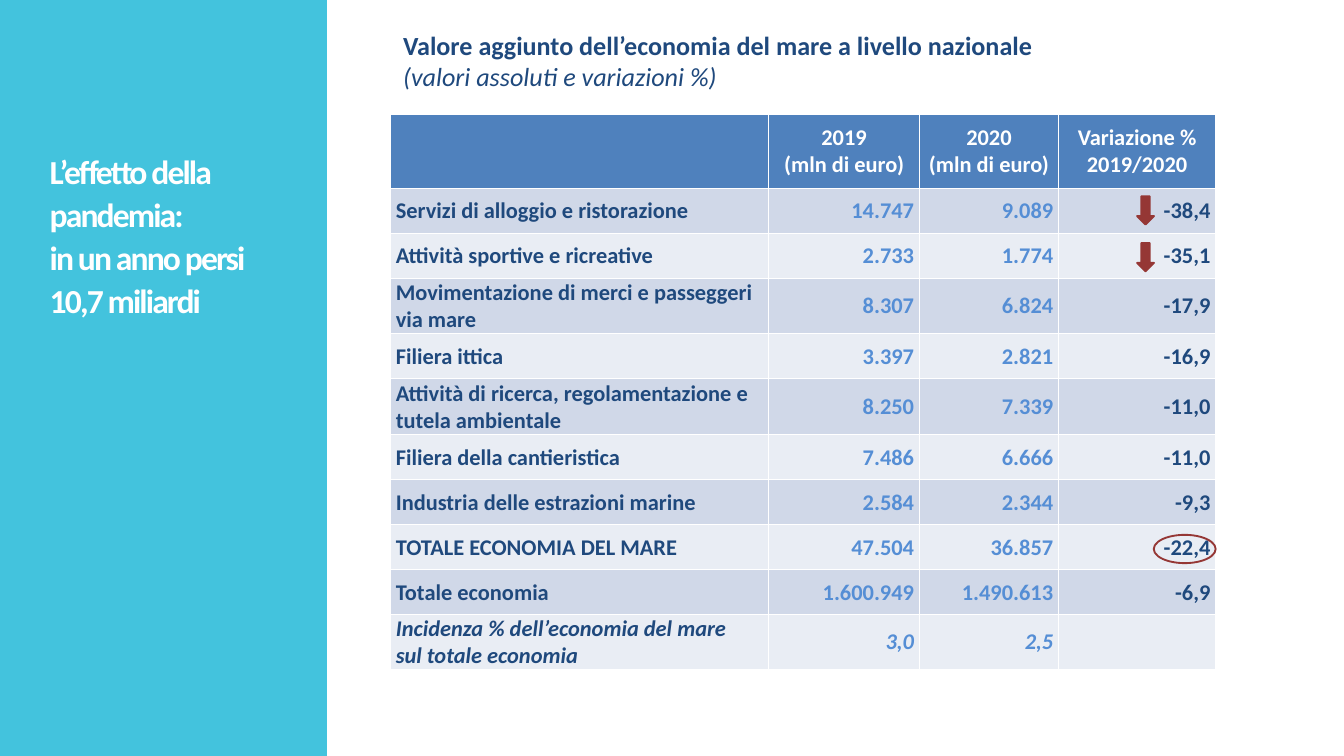
from pptx import Presentation
from pptx.dml.color import RGBColor
from pptx.enum import shapes, text
from pptx.util import Cm, Pt

FONT = "Calibri"
WHITE = RGBColor(0xFF, 0xFF, 0xFF)
TURQUOISE = RGBColor(0x43, 0xC3, 0xDD)
NAVY = RGBColor(0x1F, 0x49, 0x7D)
BLUE = RGBColor(0x4F, 0x81, 0xBD)
LIGHT_BLUE = RGBColor(0x55, 0x8E, 0xD5)
BANDS = (RGBColor(0xD0, 0xD8, 0xE8), RGBColor(0xE9, 0xED, 0xF4))
RED = RGBColor(0x95, 0x37, 0x35)

HEADER = ["", "2019\n(mln di euro)", "2020\n(mln di euro)", "Variazione % 2019/2020"]
ROWS = [
    ["Servizi di alloggio e ristorazione", "14.747", "9.089", "-38,4"],
    ["Attività sportive e ricreative", "2.733", "1.774", "-35,1"],
    ["Movimentazione di merci e passeggeri via mare", "8.307", "6.824", "-17,9"],
    ["Filiera ittica", "3.397", "2.821", "-16,9"],
    ["Attività di ricerca, regolamentazione e tutela ambientale", "8.250", "7.339", "-11,0"],
    ["Filiera della cantieristica", "7.486", "6.666", "-11,0"],
    ["Industria delle estrazioni marine", "2.584", "2.344", "-9,3"],
    ["TOTALE ECONOMIA DEL MARE", "47.504", "36.857", "-22,4"],
    ["Totale economia", "1.600.949", "1.490.613", "-6,9"],
    ["Incidenza % dell’economia del mare\nsul totale economia", "3,0", "2,5", ""],
]
COLUMN_WIDTHS = [14.3, 5.69, 5.26, 5.94]
COLUMN_COLORS = [NAVY, LIGHT_BLUE, LIGHT_BLUE, NAVY]
HEADER_HEIGHT = 2.77
ROW_HEIGHT = 1.7
TALL_ROWS = {3: 2.11, 5: 2.11, 10: 2.03}


def format_paragraph(paragraph, size, color, bold=True, italic=False, align=text.PP_ALIGN.LEFT):
    paragraph.alignment = align
    for run in paragraph.runs:
        font = run.font
        font.name, font.size, font.bold, font.italic = FONT, Pt(size), bold, italic
        font.color.rgb = color


def add_marker(slide, kind, left, top, width, height, fill=None, line=None):
    shape = slide.shapes.add_shape(kind, Cm(left), Cm(top), Cm(width), Cm(height))
    shape.shadow.inherit = False
    if fill is None:
        shape.fill.background()
    else:
        shape.fill.solid()
        shape.fill.fore_color.rgb = fill
    if line is None:
        shape.line.fill.background()
    else:
        shape.line.color.rgb = line
        shape.line.width = Pt(2)


def fill_title(slide):
    title = slide.shapes.title
    title.left, title.top, title.width, title.height = Cm(1.88), Cm(5.56), Cm(8.92), Cm(8.2)
    frame = title.text_frame
    frame.text = "L’effetto della pandemia:\nin un anno persi 10,7 miliardi"
    frame.word_wrap = True
    frame.auto_size = text.MSO_AUTO_SIZE.NONE
    frame.vertical_anchor = text.MSO_ANCHOR.TOP
    frame.margin_left = frame.margin_right = frame.margin_bottom = 0
    frame.margin_top = Cm(0.03)
    for paragraph in frame.paragraphs:
        paragraph.line_spacing = 1.07
        format_paragraph(paragraph, 36, WHITE)
        for run in paragraph.runs:
            run.font._element.set("spc", "-200")


def add_heading(slide):
    box = slide.shapes.add_textbox(Cm(14.99), Cm(0.97), Cm(35.8), Cm(2.64))
    frame = box.text_frame
    frame.word_wrap = True
    frame.vertical_anchor = text.MSO_ANCHOR.MIDDLE
    frame.text = "Valore aggiunto dell’economia del mare a livello nazionale\n(valori assoluti e variazioni %)"
    heading, subheading = frame.paragraphs
    format_paragraph(heading, 28, NAVY)
    format_paragraph(subheading, 28, NAVY, bold=False, italic=True)


def fill_cell(cell, content, fill, color, align, italic=False):
    cell.fill.solid()
    cell.fill.fore_color.rgb = fill
    cell.vertical_anchor = text.MSO_ANCHOR.MIDDLE
    cell.text_frame.text = content
    for paragraph in cell.text_frame.paragraphs:
        format_paragraph(paragraph, 24, color, italic=italic, align=align)


def set_body_margins(cell, is_label):
    cell.margin_left = Cm(0.2 if is_label else 0.03)
    cell.margin_right = Cm(0.03 if is_label else 0.2)
    cell.margin_top, cell.margin_bottom = Cm(0.03), 0


def add_value_table(slide):
    heights = [HEADER_HEIGHT] + [TALL_ROWS.get(i, ROW_HEIGHT) for i in range(1, len(ROWS) + 1)]
    frame = slide.shapes.add_table(len(heights), len(HEADER), Cm(14.76), Cm(4.34),
                                   Cm(sum(COLUMN_WIDTHS)), Cm(sum(heights)))
    table = frame.table
    for column, width in zip(table.columns, COLUMN_WIDTHS):
        column.width = Cm(width)
    for row, height in zip(table.rows, heights):
        row.height = Cm(height)
    for c, content in enumerate(HEADER):
        fill_cell(table.cell(0, c), content, BLUE, WHITE, text.PP_ALIGN.CENTER)
    for r, values in enumerate(ROWS, start=1):
        for c, content in enumerate(values):
            cell = table.cell(r, c)
            align = text.PP_ALIGN.RIGHT if c else text.PP_ALIGN.LEFT
            fill_cell(cell, content, BANDS[(r - 1) % 2], COLUMN_COLORS[c], align,
                      italic=r == len(ROWS))
            set_body_margins(cell, c == 0)


def main():
    presentation = Presentation()
    presentation.slide_width, presentation.slide_height = Cm(50.8), Cm(28.58)
    slide = presentation.slides.add_slide(presentation.slide_layouts[5])
    slide.background.fill.solid()
    slide.background.fill.fore_color.rgb = TURQUOISE

    add_marker(slide, shapes.MSO_SHAPE.RECTANGLE, 12.37, 0, 38.43, 28.58, fill=WHITE)
    fill_title(slide)
    add_heading(slide)
    add_value_table(slide)
    add_marker(slide, shapes.MSO_SHAPE.OVAL, 43.61, 20.22, 2.34, 1.07, line=RED)
    for top in (7.42, 9.19):
        add_marker(slide, shapes.MSO_SHAPE.DOWN_ARROW, 42.98, top, 0.64, 1.07, fill=RED, line=RED)

    presentation.save("out.pptx")


if __name__ == "__main__":
    main()
